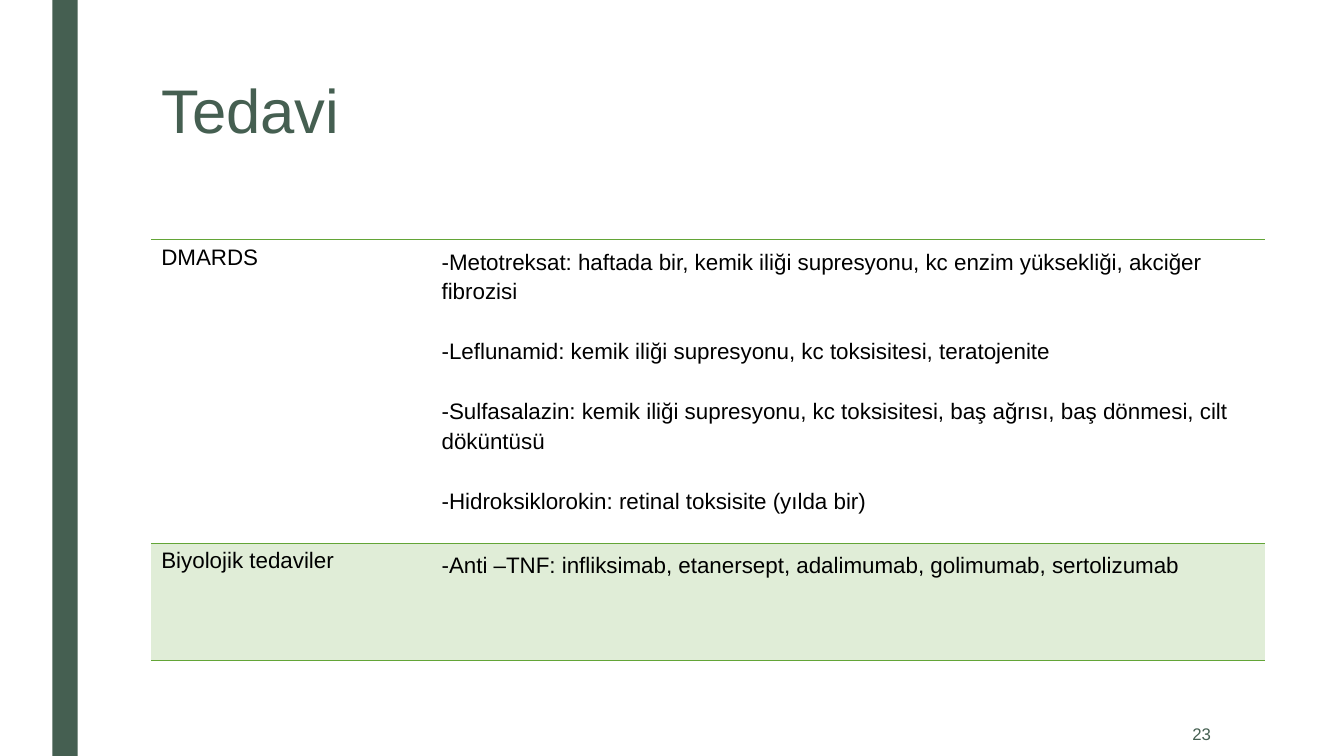
import pptx
import pptx.util
import pptx.dml.color
import pptx.enum.shapes
import pptx.enum.text
import pptx.oxml
import pptx.oxml.ns

Inches, Pt = pptx.util.Inches, pptx.util.Pt
GREEN, DARK, PALE = "63A537", "455F51", "E0EDD7"


def color(value):
    return pptx.dml.color.RGBColor.from_string(value)


def add_run(p, text, size, value):
    r = p.add_run()
    r.text = text
    r.font.size = Pt(size)
    r.font.name = "Arial"
    r.font.color.rgb = color(value)


prs = pptx.Presentation()
prs.slide_width, prs.slide_height = Inches(13.33), Inches(7.5)
s = prs.slides.add_slide(prs.slide_layouts[5])

# Side bar
bar = s.shapes.add_shape(pptx.enum.shapes.MSO_SHAPE.RECTANGLE,
                         Inches(0.52), Inches(0), Inches(0.25), Inches(7.5))
bar.shadow.inherit = False
bar.fill.solid()
bar.fill.fore_color.rgb = color(DARK)
bar.line.fill.background()

# Title
title = s.shapes.title
title.left, title.top = Inches(1.5), Inches(0.75)
title.width, title.height = Inches(10.5), Inches(1.62)
tf = title.text_frame
tf.vertical_anchor = pptx.enum.text.MSO_ANCHOR.TOP
p = tf.paragraphs[0]
p.alignment = pptx.enum.text.PP_ALIGN.LEFT
p.line_spacing = 0.89
add_run(p, "Tedavi", 44, DARK)

# Treatment table: group, drugs, row height, fill
treatments = [
    ("DMARDS", [
        "-Metotreksat: haftada bir, kemik iliği supresyonu, kc enzim yüksekliği, akciğer fibrozisi",
        "-Leflunamid: kemik iliği supresyonu, kc toksisitesi, teratojenite",
        "-Sulfasalazin: kemik iliği supresyonu, kc toksisitesi, baş ağrısı, baş dönmesi, cilt döküntüsü",
        "-Hidroksiklorokin: retinal toksisite (yılda bir)",
    ], 3.01, None),
    ("Biyolojik tedaviler", [
        "-Anti –TNF: infliksimab, etanersept, adalimumab, golimumab, sertolizumab",
    ], 1.16, PALE),
]
table = s.shapes.add_table(2, 2, Inches(1.5), Inches(2.38),
                           Inches(11.05), Inches(4.17)).table
table.first_row = table.horz_banding = False
table.columns[0].width = Inches(2.28)
table.columns[1].width = Inches(8.77)

for i, (group, drugs, height, fill) in enumerate(treatments):
    table.rows[i].height = Inches(height)
    add_run(table.cell(i, 0).text_frame.paragraphs[0], group, 16, "000000")

    tf = table.cell(i, 1).text_frame
    for j, drug in enumerate(drugs):
        p = tf.add_paragraph() if j else tf.paragraphs[0]
        p.line_spacing = 1.2
        p.space_before = Pt(21.4 if j else 0)
        pPr = p._p.get_or_add_pPr()
        pPr.set("marL", str(Inches(0.5)))
        pPr.set("indent", "0")
        add_run(p, drug, 16, "000000")

    # Cell fill and horizontal rules
    for cell in table.rows[i].cells:
        if fill:
            cell.fill.solid()
            cell.fill.fore_color.rgb = color(fill)
        else:
            cell.fill.background()
        tcPr = cell._tc.get_or_add_tcPr()
        for k, side in enumerate("LRTB"):
            paint = (f'<a:solidFill><a:srgbClr val="{GREEN}"/></a:solidFill>'
                     if side in "TB" else "<a:noFill/>")
            tcPr.insert(k, pptx.oxml.parse_xml(
                f'<a:ln{side} {pptx.oxml.ns.nsdecls("a")} w="{Pt(1)}">{paint}</a:ln{side}>'))

# Page number
sp = s.shapes.add_textbox(Inches(10.36), Inches(7.06), Inches(1.75), Inches(0.44))
tf = sp.text_frame
tf.word_wrap = True
tf.vertical_anchor = pptx.enum.text.MSO_ANCHOR.MIDDLE
p = tf.paragraphs[0]
p.alignment = pptx.enum.text.PP_ALIGN.RIGHT
add_run(p, "23", 12, DARK)

prs.save("out.pptx")
